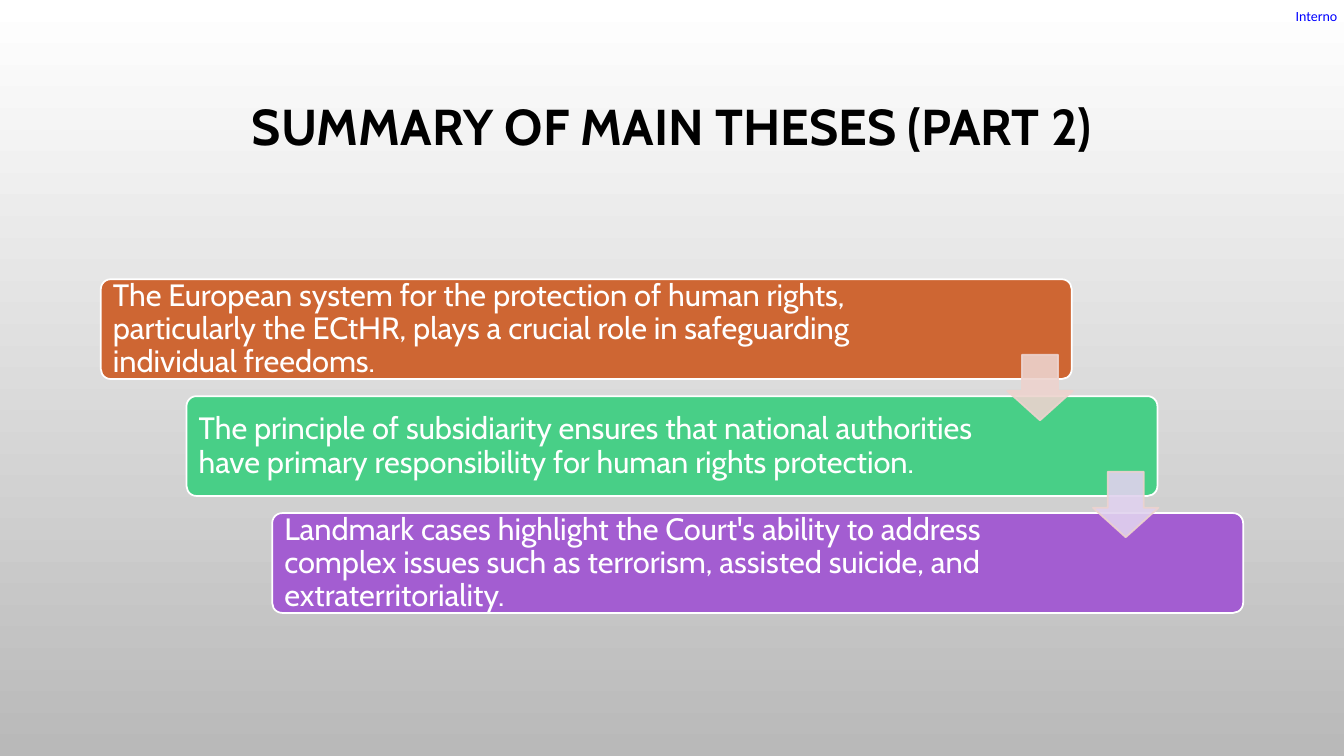
import pptx
import pptx.util
import pptx.dml.color
import pptx.enum.shapes
import pptx.enum.text
import pptx.oxml
import pptx.oxml.ns

Inches, Pt = pptx.util.Inches, pptx.util.Pt
SHAPES = pptx.enum.shapes.MSO_SHAPE
MIDDLE = pptx.enum.text.MSO_ANCHOR.MIDDLE


def paint(color_format, color, alpha=None):
    """Set a colour from a hex string, with optional opacity in percent."""
    color_format.rgb = pptx.dml.color.RGBColor.from_string(color)
    if alpha:
        # The colour element is the only srgbClr with this fill
        element = color_format._color._xClr
        opacity = pptx.oxml.parse_xml(
            f'<a:alpha {pptx.oxml.ns.nsdecls("a")} val="{alpha * 1000}"/>')
        element.append(opacity)


def add_panel(kind, left, top, width, height, fill, line, alpha=None):
    shape = slide.shapes.add_shape(
        kind, Inches(left), Inches(top), Inches(width), Inches(height))
    shape.shadow.inherit = False
    shape.fill.solid()
    paint(shape.fill.fore_color, fill, alpha)
    shape.line.width = Pt(1.25)
    shape.line.fill.solid()
    paint(shape.line.fill.fore_color, line, alpha)
    return shape


presentation = pptx.Presentation()
presentation.slide_width, presentation.slide_height = Inches(13.33), Inches(7.5)
slide = presentation.slides.add_slide(presentation.slide_layouts[5])

# Background: white fading down to grey
background = slide.background.fill
background.gradient()
background.gradient_angle = 270
for stop, color in zip(background.gradient_stops, ("FFFFFF", "B9B9B9")):
    paint(stop.color, color)
background.gradient_stops[0].position = 0
background.gradient_stops[1].position = 1

# Classification label
label = slide.shapes.add_textbox(
    Inches(12.85), Inches(0.07), Inches(0.45), Inches(0.17))
frame = label.text_frame
frame.margin_left = frame.margin_right = frame.margin_top = frame.margin_bottom = 0
frame.word_wrap = False
frame.auto_size = pptx.enum.text.MSO_AUTO_SIZE.SHAPE_TO_FIT_TEXT
frame.text = "Interno"
font = frame.paragraphs[0].runs[0].font
font.name, font.size = "Calibri", Pt(10)
paint(font.color, "0000FF")

# Title, raised above the middle of its box
title = slide.shapes.title
title.left, title.top = Inches(1), Inches(0.68)
title.width, title.height = Inches(11.33), Inches(1.75)
frame = title.text_frame
frame.text = "SUMMARY OF MAIN THESES (PART 2)"
frame.vertical_anchor = MIDDLE
frame.margin_bottom = Inches(0.6)
frame.auto_size = pptx.enum.text.MSO_AUTO_SIZE.NONE
paragraph = frame.paragraphs[0]
paragraph.alignment = pptx.enum.text.PP_ALIGN.CENTER
paragraph.line_spacing = 0.9
font = paragraph.runs[0].font
font.name, font.size, font.bold = "Cabin", Pt(36), True
paint(font.color, "000000")

# Staircase of theses: fill, text width, text
LEFT, TOP, STEP_X, STEP_Y = 1, 2.77, 0.85, 1.16
theses = [
    ("CE6633", 8.56, "The European system for the protection of human rights, "
     "particularly the ECtHR, plays a crucial role in safeguarding individual freedoms."),
    ("48CF87", 8.08, "The principle of subsidiarity ensures that national authorities "
     "have primary responsibility for human rights protection."),
    ("A35DD1", 8.08, "Landmark cases highlight the Court's ability to address complex "
     "issues such as terrorism, assisted suicide, and extraterritoriality."),
]
for step, (color, text_width, text) in enumerate(theses):
    left, top = LEFT + step * STEP_X, TOP + step * STEP_Y
    card = add_panel(SHAPES.ROUNDED_RECTANGLE, left, top, 9.63, 0.99, color, "FFFFFF")
    card.adjustments[0] = 0.1

    thesis = slide.shapes.add_textbox(
        Inches(left + 0.03), Inches(top + 0.03), Inches(text_width), Inches(0.94))
    frame = thesis.text_frame
    frame.word_wrap = True
    frame.vertical_anchor = MIDDLE
    frame.margin_left = frame.margin_right = Inches(0.09)
    frame.margin_top = frame.margin_bottom = Inches(0.09)
    frame.text = text
    paragraph = frame.paragraphs[0]
    paragraph.line_spacing = 0.9
    font = paragraph.runs[0].font
    font.name, font.size = "Cabin", Pt(22)
    paint(font.color, "FFFFFF")

# Arrows leading from each step to the next
for step, color in enumerate(("EDD3CE", "E0D2EE")):
    arrow = add_panel(SHAPES.DOWN_ARROW, LEFT + 8.99 + step * STEP_X,
                      TOP + 0.75 + step * STEP_Y, 0.65, 0.65, color, "EDD3CE", 90)
    arrow.adjustments[0], arrow.adjustments[1] = 0.55, 0.45

presentation.save("out.pptx")
